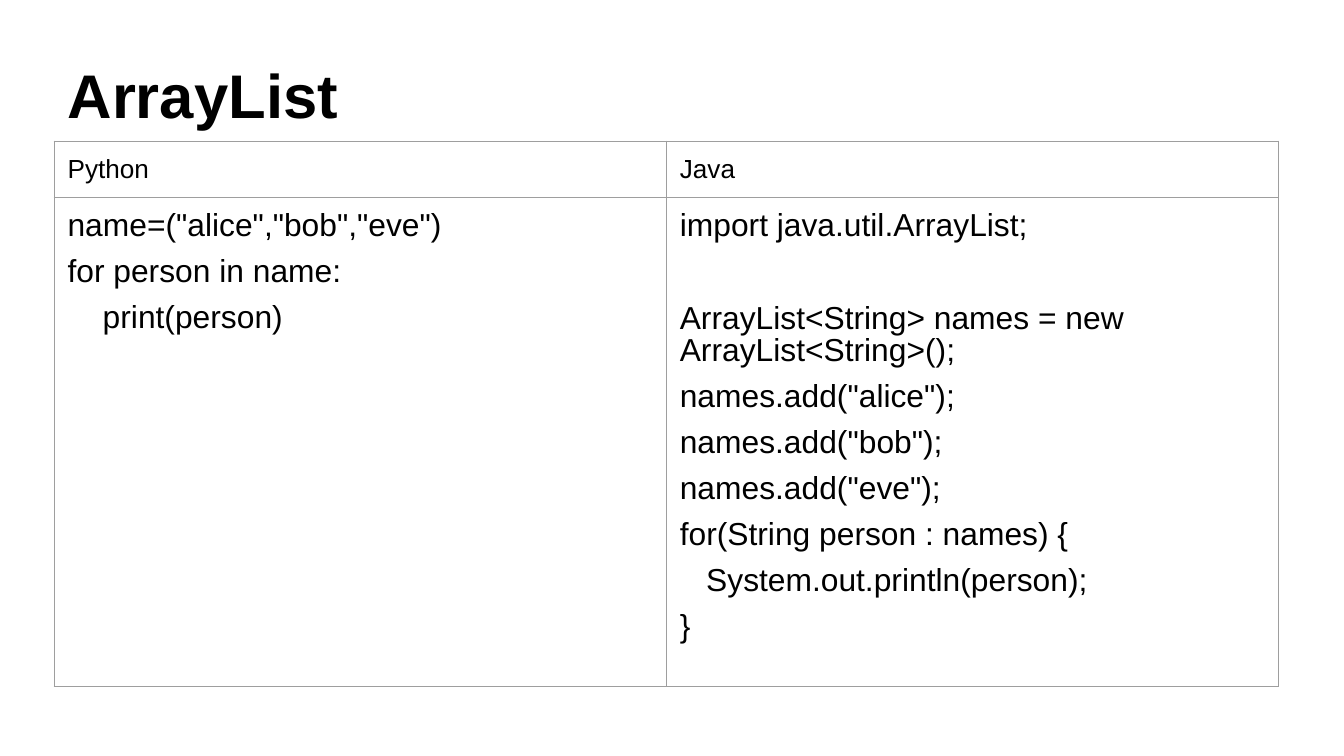
import pptx
import pptx.dml.color
import pptx.enum.text
import pptx.util
from lxml import etree

Pt = pptx.util.Pt
BLACK, GRAY = "000000", "9E9E9E"
BORDER = (
    '<a:{side} xmlns:a="http://schemas.openxmlformats.org/drawingml/2006/main" w="9525">'
    '<a:solidFill><a:srgbClr val="{color}"/></a:solidFill></a:{side}>'
)


def color(value):
    return pptx.dml.color.RGBColor.from_string(value)


def write(para, text, size=17, bold=False, spacing=None, before=0):
    para.alignment = pptx.enum.text.PP_ALIGN.LEFT
    para.space_before = Pt(before)
    if spacing:
        para.line_spacing = spacing
    span = para.add_run()
    span.text = text
    span.font.name = "Arial"
    span.font.size = Pt(size)
    span.font.bold = bold
    span.font.color.rgb = color(BLACK)


deck = pptx.Presentation()
deck.slide_width, deck.slide_height = Pt(720), Pt(405)
page = deck.slides.add_slide(deck.slide_layouts[5])

# Title
title = page.shapes.title
title.left, title.top, title.width, title.height = Pt(29), Pt(30.2), Pt(663), Pt(45.4)
title.text_frame.auto_size = pptx.enum.text.MSO_AUTO_SIZE.NONE
title.text_frame.vertical_anchor = pptx.enum.text.MSO_ANCHOR.MIDDLE
write(title.text_frame.paragraphs[0], "ArrayList", size=33, bold=True, spacing=0.9)

# Code samples: space before each line, then its text
LINE_GAP, SECTION_GAP = 7.5, 32.5
samples = {
    "Python": [
        (0, 'name=("alice","bob","eve")'),
        (LINE_GAP, "for person in name:"),
        (LINE_GAP, "    print(person)"),
    ],
    "Java": [
        (0, "import java.util.ArrayList;"),
        (SECTION_GAP, "ArrayList<String> names = new ArrayList<String>();"),
        (LINE_GAP, 'names.add("alice");'),
        (LINE_GAP, 'names.add("bob");'),
        (LINE_GAP, 'names.add("eve");'),
        (LINE_GAP, "for(String person : names) {"),
        (LINE_GAP, "   System.out.println(person);"),
        (LINE_GAP, "}"),
    ],
}

# Comparison table
table = page.shapes.add_table(2, 2, Pt(29), Pt(75.6), Pt(656), Pt(292)).table
table.first_row = table.horz_banding = False
table.rows[0].height, table.rows[1].height = Pt(30), Pt(262)
for column in table.columns:
    column.width = Pt(328)

# Cell margins and borders
for cell in table.iter_cells():
    cell.margin_left = cell.margin_right = Pt(7.2)
    cell.margin_top = cell.margin_bottom = Pt(7.2)
    properties = cell._tc.get_or_add_tcPr()
    for side in ("lnL", "lnR", "lnT", "lnB"):
        properties.append(etree.fromstring(BORDER.format(side=side, color=GRAY)))
    cell.fill.background()

# Cell text
for index, (language, lines) in enumerate(samples.items()):
    write(table.cell(0, index).text_frame.paragraphs[0], language, size=14)
    frame = table.cell(1, index).text_frame
    for number, (gap, line) in enumerate(lines):
        para = frame.add_paragraph() if number else frame.paragraphs[0]
        write(para, line, spacing=0.9, before=gap)

deck.save("out.pptx")
